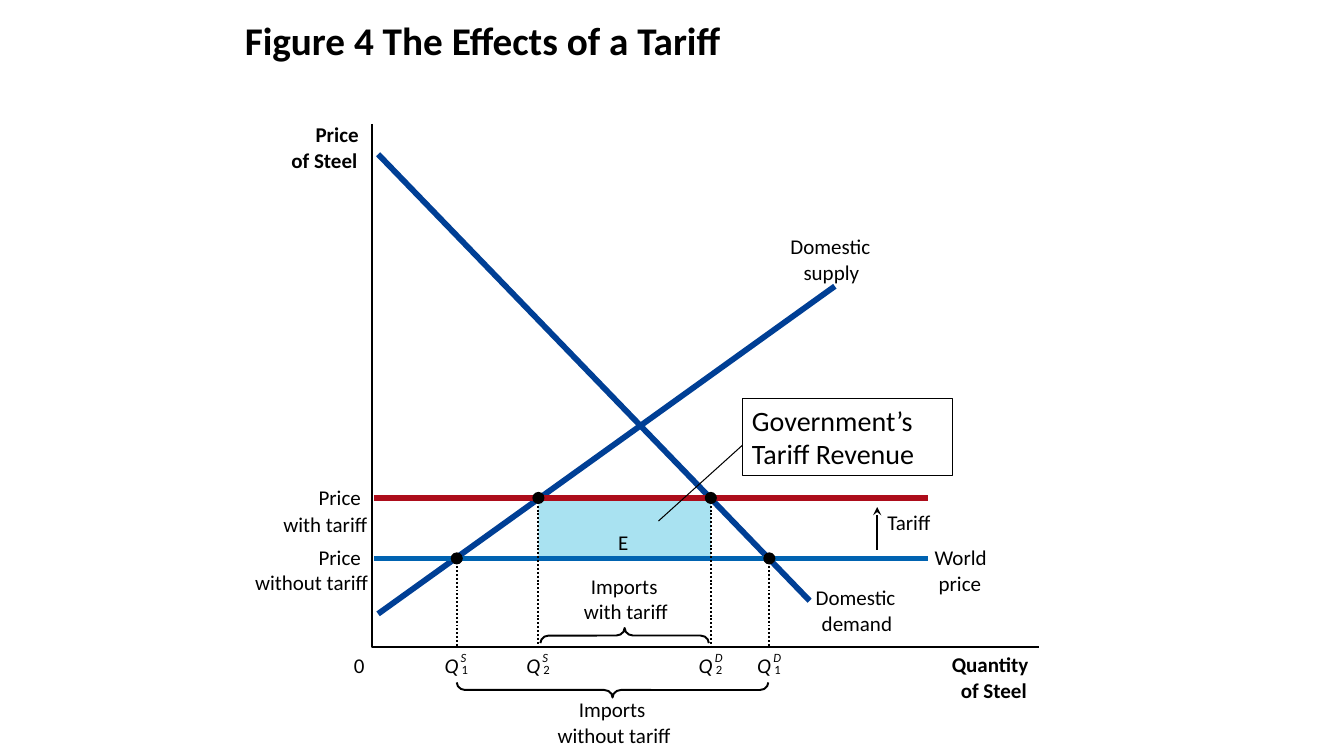
from dataclasses import dataclass

from lxml.etree import SubElement
from pptx import Presentation
from pptx.dml.color import RGBColor
from pptx.enum.dml import MSO_LINE
from pptx.enum.shapes import MSO_CONNECTOR, MSO_SHAPE
from pptx.enum.text import MSO_ANCHOR, MSO_AUTO_SIZE
from pptx.oxml.ns import qn
from pptx.util import Inches, Pt


@dataclass(frozen=True)
class Theme:
    font: str = "Calibri"
    black: str = "000000"
    white: str = "FFFFFF"
    curve: str = "003F95"
    tariff: str = "AD0D1B"
    world: str = "0063B1"
    revenue: str = "A9E2F1"
    title_size: int = 28
    callout_size: int = 20
    label_size: int = 15
    index_size: int = 9
    thick: float = 4.13
    medium: float = 1.38
    thin: float = 0.75


theme = Theme()
presentation = Presentation()
presentation.slide_width = Inches(13.33)
presentation.slide_height = Inches(7.5)
slide = presentation.slides.add_slide(presentation.slide_layouts[6])
shapes = slide.shapes


def add_label(text, left, top, width, size=theme.label_size, bold=False, italic=False):
    height = 0.25 * size / theme.label_size
    box = shapes.add_textbox(Inches(left), Inches(top), Inches(width), Inches(height))
    frame = box.text_frame
    frame.margin_left = frame.margin_right = frame.margin_top = frame.margin_bottom = 0
    frame.word_wrap = False
    frame.auto_size = MSO_AUTO_SIZE.SHAPE_TO_FIT_TEXT
    frame.text = text
    font = frame.paragraphs[0].runs[0].font
    font.name, font.size = theme.font, Pt(size)
    font.bold, font.italic = bold, italic
    font.color.rgb = RGBColor.from_string(theme.black)
    return box


def add_line(x1, y1, x2, y2, color=theme.black, width=theme.medium):
    connector = shapes.add_connector(
        MSO_CONNECTOR.STRAIGHT, Inches(x1), Inches(y1), Inches(x2), Inches(y2))
    connector.line.color.rgb = RGBColor.from_string(color)
    connector.line.width = Pt(width)
    SubElement(connector._element.spPr, qn("a:effectLst"))
    return connector


# Key levels of the diagram
tariff_y, world_y, axis_y = 4.94, 5.54, 6.42
dot_size = 0.12

# Title
title = add_label("Figure 4 The Effects of a Tariff", 2.33, 0.06, 9, theme.title_size, bold=True)
title_frame = title.text_frame
title_frame.auto_size = MSO_AUTO_SIZE.NONE
title_frame.word_wrap = True
title_frame.vertical_anchor = MSO_ANCHOR.MIDDLE
title_frame.margin_left = title_frame.margin_right = Inches(0.1)
title_frame.paragraphs[0].line_spacing = 0.8
title.height = Inches(0.75)

# Axes
builder = shapes.build_freeform(Inches(3.69), Inches(1.23))
builder.add_line_segments(
    [(Inches(3.69), Inches(axis_y)), (Inches(10.3), Inches(axis_y))], close=False)
axes = builder.convert_to_shape()
axes.shadow.inherit = False
axes.fill.background()
axes.line.color.rgb = RGBColor.from_string(theme.black)
axes.line.width = Pt(theme.medium)

# Tariff arrow
arrow = add_line(8.7, 5.03, 8.7, 5.46)
SubElement(arrow.line._get_or_add_ln(), qn("a:headEnd"), type="stealth")

# Revenue area
revenue = shapes.add_shape(
    MSO_SHAPE.RECTANGLE, Inches(5.34), Inches(tariff_y), Inches(1.71), Inches(0.59))
revenue.shadow.inherit = False
revenue.fill.solid()
revenue.fill.fore_color.rgb = RGBColor.from_string(theme.revenue)
revenue.line.fill.background()

# Supply, demand and price lines
add_line(3.75, 6.09, 8.28, 2.84, theme.curve, theme.thick)
add_line(3.75, 1.53, 8.03, 5.96, theme.curve, theme.thick)
add_line(3.71, tariff_y, 9.2, tariff_y, theme.tariff, theme.thick)
add_line(3.71, world_y, 9.2, world_y, theme.world, theme.thick)

# Axis titles
for text, left, top, width in [
    ("Price", 3.13, 1.21, 0.43),
    ("of Steel", 2.89, 1.46, 0.66),
    ("Quantity", 9.44, 6.46, 0.77),
    ("of Steel", 9.53, 6.72, 0.66),
]:
    add_label(text, left, top, width, bold=True)

# Labels of curves, prices and areas
for text, left, top, width in [
    ("0", 3.51, 6.47, 0.11),
    ("E", 6.13, 5.25, 0.1),
    ("Domestic", 7.84, 2.32, 0.8),
    ("supply", 7.97, 2.57, 0.56),
    ("Domestic", 8.09, 5.8, 0.8),
    ("demand", 8.15, 6.06, 0.7),
    ("Price", 3.16, 4.81, 0.43),
    ("with tariff", 2.81, 5.07, 0.85),
    ("Price", 3.16, 5.4, 0.43),
    ("without tariff", 2.53, 5.65, 1.14),
    ("Tariff", 8.8, 5.05, 0.45),
    ("World", 9.27, 5.4, 0.52),
    ("price", 9.31, 5.66, 0.43),
    ("Imports", 5.86, 5.69, 0.69),
    ("with tariff", 5.79, 5.94, 0.85),
    ("Imports", 5.74, 6.91, 0.69),
    ("without tariff", 5.53, 7.17, 1.14),
]:
    add_label(text, left, top, width)

# Braces: upright presets turned by a quarter
for preset, left, top, length in [
    (MSO_SHAPE.LEFT_BRACE, 5.36, 6.23, 1.67),
    (MSO_SHAPE.RIGHT_BRACE, 4.53, 6.77, 3.09),
]:
    depth = 0.15
    brace = shapes.add_shape(
        preset, Inches(left + (length - depth) / 2), Inches(top - (length - depth) / 2),
        Inches(depth), Inches(length))
    brace.rotation = 90
    brace.adjustments[0] = 0.55
    brace.shadow.inherit = False
    brace.fill.background()
    brace.line.color.rgb = RGBColor.from_string(theme.black)
    brace.line.width = Pt(theme.medium)

# Quantities: dotted drop line, dot and symbol
for x, y, index, side in [
    (4.53, world_y, "1", "S"),
    (5.34, tariff_y, "2", "S"),
    (7.05, tariff_y, "2", "D"),
    (7.63, world_y, "1", "D"),
]:
    drop = add_line(x, y, x, axis_y)
    drop.line.dash_style = MSO_LINE.ROUND_DOT
    dot = shapes.add_shape(
        MSO_SHAPE.OVAL, Inches(x - dot_size / 2), Inches(y - dot_size / 2),
        Inches(dot_size), Inches(dot_size))
    dot.shadow.inherit = False
    dot.fill.solid()
    dot.fill.fore_color.rgb = RGBColor.from_string(theme.black)
    dot.line.fill.background()
    add_label("Q", x - 0.12, 6.47, 0.14, italic=True)
    add_label(side, x + 0.04, 6.45, 0.07, theme.index_size, italic=True)
    add_label(index, x + 0.05, 6.57, 0.06, theme.index_size)

# Callout
add_line(6.53, 5.17, 7.46, 4.33, width=theme.thin)
callout = shapes.add_shape(
    MSO_SHAPE.RECTANGLE, Inches(7.36), Inches(3.95), Inches(2.09), Inches(0.77))
callout.shadow.inherit = False
callout.fill.solid()
callout.fill.fore_color.rgb = RGBColor.from_string(theme.white)
callout.line.color.rgb = RGBColor.from_string(theme.black)
callout.line.width = Pt(theme.thin)
callout_frame = callout.text_frame
callout_frame.word_wrap = True
callout_frame.auto_size = MSO_AUTO_SIZE.SHAPE_TO_FIT_TEXT
callout_frame.vertical_anchor = MSO_ANCHOR.TOP
callout_frame.text = "Government’s Tariff Revenue"
paragraph = callout_frame.paragraphs[0]
paragraph.alignment = 1  # left
callout_font = paragraph.runs[0].font
callout_font.name, callout_font.size = theme.font, Pt(theme.callout_size)
callout_font.color.rgb = RGBColor.from_string(theme.black)

presentation.save("out.pptx")
